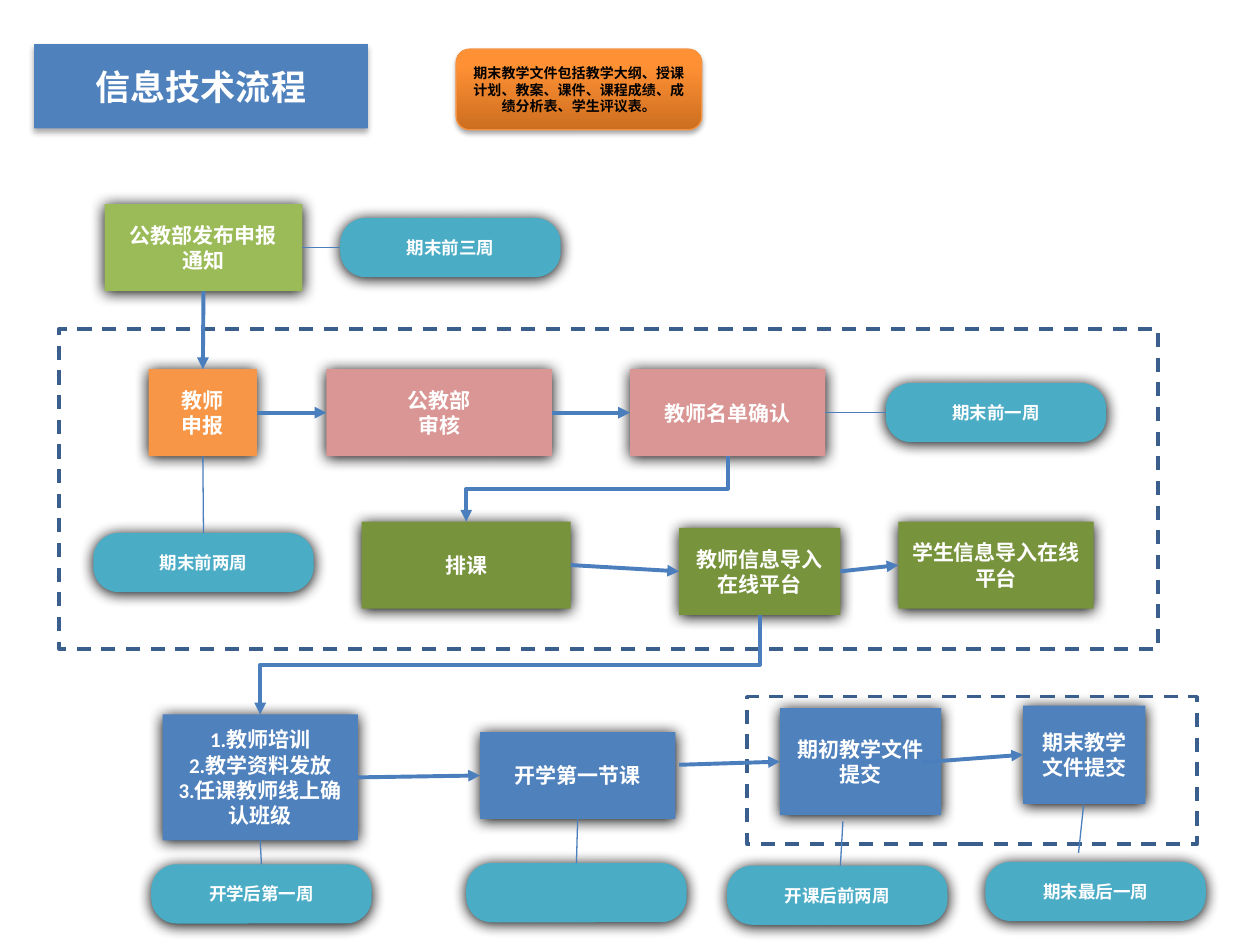
import copy
import dataclasses

import pptx
import pptx.dml.color
import pptx.enum.dml
import pptx.enum.shapes
import pptx.enum.text
import pptx.oxml.ns
import pptx.util

SHAPES = pptx.enum.shapes.MSO_SHAPE
CONNECTORS = pptx.enum.shapes.MSO_CONNECTOR
TOP, LEFT, BOTTOM, RIGHT = range(4)  # connection sites
COLUMNS, ROWS = 100, 75
SLIDE_WIDTH, SLIDE_HEIGHT = pptx.util.Inches(10), pptx.util.Inches(7.5)
BOX_HEIGHT = 6.9
PILL_SIZE = (17.5, 4.7)


@dataclasses.dataclass(frozen=True)
class Theme:
    font: str = "Calibri"
    title_size: float = 20
    step_size: float = 12
    time_size: float = 10
    note_size: float = 8
    white: str = "FFFFFF"
    black: str = "000000"
    blue: str = "4F81BD"
    lime: str = "9BBB59"
    orange: str = "F79646"
    pink: str = "D99694"
    green: str = "77933C"
    teal: str = "4BACC6"
    connector: str = "4B7EBC"
    frame: str = "3A5F8C"
    note_line: str = "F69240"
    note_stops: tuple = ((0, "CC6E20"), (0.8, "FF9034"), (1, "FF9136"))
    # blur, distance, opacity in percent
    step_shadow: tuple = (8.5, 1, 100)
    title_shadow: tuple = (3.5, 2.2, 32)
    note_shadow: tuple = (3.1, 1.8, 35)


THEME = Theme()


@dataclasses.dataclass(frozen=True)
class Box:
    """A region of the slide, measured in grid columns and rows."""
    left: float
    top: float
    width: float
    height: float

    def inner(self, left, top, width, height):
        return Box(self.left + left, self.top + top, width, height)

    def point(self, column, row):
        return across(self.left + column), down(self.top + row)


def across(columns):
    return round(SLIDE_WIDTH * columns / COLUMNS)


def down(rows):
    return round(SLIDE_HEIGHT * rows / ROWS)


def rgb(value):
    return pptx.dml.color.RGBColor.from_string(value)


def add_child(parent, tag, **attributes):
    child = parent.makeelement(pptx.oxml.ns.qn(tag), attributes)
    parent.append(child)
    return child


def add_panel(slide, box, kind=SHAPES.RECTANGLE):
    shape = slide.shapes.add_shape(
        kind, across(box.left), down(box.top), across(box.width), down(box.height))
    shape.shadow.inherit = False
    shape.line.fill.background()
    return shape


def set_fill(shape, color):
    shape.fill.solid()
    shape.fill.fore_color.rgb = rgb(color)


def set_shadow(shape, settings):
    blur, distance, opacity = settings
    effects = shape._element.spPr.find(pptx.oxml.ns.qn("a:effectLst"))
    shadow = add_child(effects, "a:outerShdw", blurRad=str(pptx.util.Pt(blur)),
                       dist=str(pptx.util.Pt(distance)), dir="5400000", rotWithShape="0")
    color = add_child(shadow, "a:srgbClr", val=THEME.black)
    add_child(color, "a:alpha", val=str(opacity * 1000))


def set_text(shape, text, size, color=THEME.white):
    frame = shape.text_frame
    frame.text = text
    frame.word_wrap = True
    frame.vertical_anchor = pptx.enum.text.MSO_ANCHOR.MIDDLE
    for paragraph in frame.paragraphs:
        paragraph.alignment = pptx.enum.text.PP_ALIGN.CENTER
        for run in paragraph.runs:
            run.font.name = THEME.font
            run.font.size = pptx.util.Pt(size)
            run.font.bold = True
            run.font.color.rgb = rgb(color)


def add_step(slide, box, text, color):
    shape = add_panel(slide, box)
    set_fill(shape, color)
    set_shadow(shape, THEME.step_shadow)
    set_text(shape, text, THEME.step_size)
    return shape


def add_time(slide, region, column, row, text=""):
    """Add a pill that tells when a step takes place."""
    shape = add_panel(slide, region.inner(column, row, *PILL_SIZE), SHAPES.ROUNDED_RECTANGLE)
    shape.adjustments[0] = 0.43
    set_fill(shape, THEME.teal)
    set_shadow(shape, THEME.step_shadow)
    if text:
        set_text(shape, text, THEME.time_size)
    return shape


def add_frame(slide, box):
    shape = add_panel(slide, box)
    shape.fill.background()
    shape.line.color.rgb = rgb(THEME.frame)
    shape.line.width = pptx.util.Pt(2)
    shape.line.dash_style = pptx.enum.dml.MSO_LINE.DASH


def style_connector(connector, arrow):
    connector.line.color.rgb = rgb(THEME.connector)
    connector.line.width = pptx.util.Pt(2.25 if arrow else 0.75)
    if arrow:
        add_child(connector.line._get_or_add_ln(), "a:tailEnd", type="triangle")
    add_child(connector._element.spPr, "a:effectLst")


def connect(slide, start, end, arrow=True):
    """Draw a straight line; each end is a point or a (shape, site) pair."""
    start_glued, end_glued = (hasattr(target[0], "shape_id") for target in (start, end))
    start_point = (0, 0) if start_glued else start
    end_point = (0, 0) if end_glued else end
    connector = slide.shapes.add_connector(CONNECTORS.STRAIGHT, *start_point, *end_point)
    if start_glued:
        connector.begin_connect(*start)
    if end_glued:
        connector.end_connect(*end)
    style_connector(connector, arrow)


def connect_down_left(slide, upper, lower):
    """Draw an elbow arrow from the bottom of upper to the top of lower."""
    start_x, start_y = upper.left + upper.width // 2, upper.top + upper.height
    end_x, end_y = lower.left + lower.width // 2, lower.top
    connector = slide.shapes.add_connector(CONNECTORS.ELBOW, 0, 0, 0, 0)
    # A quarter turn swaps the two extents around the same centre.
    connector.width, connector.height = end_y - start_y, start_x - end_x
    connector.left = (start_x + end_x - connector.width) // 2
    connector.top = (start_y + end_y - connector.height) // 2
    connector._element.spPr.find(pptx.oxml.ns.qn("a:xfrm")).set("rot", "5400000")
    style_connector(connector, arrow=True)


def add_header(slide, region):
    title = add_panel(slide, region.inner(0, 0, 26.5, 6.7))
    set_fill(title, THEME.blue)
    set_shadow(title, THEME.title_shadow)
    set_text(title, "信息技术流程", THEME.title_size)

    note = add_panel(slide, region.inner(33.5, 0.4, 19.5, 6.4), SHAPES.ROUNDED_RECTANGLE)
    note.fill.gradient()
    note.fill.gradient_angle = 90
    stops = next(note._element.spPr.iter(pptx.oxml.ns.qn("a:gsLst")))
    stops.append(copy.deepcopy(stops[-1]))
    for stop, (position, color) in zip(note.fill.gradient_stops, THEME.note_stops):
        stop.position = position
        stop.color.rgb = rgb(color)
    note.line.color.rgb = rgb(THEME.note_line)
    note.line.width = pptx.util.Pt(0.75)
    set_shadow(note, THEME.note_shadow)
    set_text(note, "期末教学文件包括教学大纲、授课计划、教案、课件、课程成绩、成绩分析表、学生评议表。",
             THEME.note_size, THEME.black)


def add_announcement(slide, region):
    notice = add_step(slide, region.inner(0, 0, 15.7, BOX_HEIGHT), "公教部发布申报\n通知", THEME.lime)
    time = add_time(slide, region, 18.7, 1.1, "期末前三周")
    connect(slide, (notice, RIGHT), (time, LEFT), arrow=False)
    return notice


def add_selection(slide, region):
    """Add the framed steps; return the first step and the one that leads on."""
    add_frame(slide, region)
    apply, review, confirm, schedule, teachers, students = [
        add_step(slide, region.inner(column, row, width, BOX_HEIGHT), text, color)
        for column, row, width, text, color in (
            (7.1, 3.2, 8.6, "教师\n申报", THEME.orange),
            (21.2, 3.2, 17.9, "公教部\n审核", THEME.pink),
            (45.3, 3.2, 15.5, "教师名单确认", THEME.pink),
            (24, 15.3, 16.6, "排课", THEME.green),
            (49.2, 15.8, 12.8, "教师信息导入在线平台", THEME.green),
            (66.6, 15.3, 15.5, "学生信息导入在线平台", THEME.green))]
    for start, end in ((apply, review), (review, confirm), (schedule, teachers), (teachers, students)):
        connect(slide, (start, RIGHT), (end, LEFT))
    connect_down_left(slide, confirm, schedule)
    apply_time = add_time(slide, region, 2.7, 16.2, "期末前两周")
    confirm_time = add_time(slide, region, 65.6, 4.3, "期末前一周")
    connect(slide, (apply, BOTTOM), (apply_time, TOP), arrow=False)
    connect(slide, (confirm, RIGHT), (confirm_time, LEFT), arrow=False)
    return apply, teachers


def add_teaching(slide, region):
    training, lesson, early_files, final_files = [
        add_step(slide, region.inner(*place), text, THEME.blue) for place, text in (
            ((0.9, 1.4, 15.5, 10), "1.教师培训\n2.教学资料发放\n3.任课教师线上确认班级"),
            ((26.1, 2.8, 15.5, BOX_HEIGHT), "开学第一节课"),
            ((49.9, 0.9, 12.8, 8.5), "期初教学文件提交"),
            ((69.2, 0.7, 9.7, 7.8), "期末教学文件提交"))]
    training_time, lesson_time, _, _ = [
        add_time(slide, region, *place) for place in (
            (0, 13.3, "开学后第一周"), (25, 13.2),
            (45.7, 13.4, "开课后前两周"), (66.2, 13.1, "期末最后一周"))]
    add_frame(slide, region.inner(47.3, 0, 35.7, 11.7))
    connect(slide, (training, RIGHT), (lesson, LEFT))
    connect(slide, region.point(41.9, 5.4), (early_files, LEFT))
    connect(slide, region.point(61.2, 5.2), (final_files, LEFT))
    for start, end in (((training, BOTTOM), (training_time, TOP)),
                       ((lesson, BOTTOM), (lesson_time, TOP)),
                       (region.point(54.9, 9.9), region.point(54.7, 13.4)),
                       (region.point(74, 8.6), region.point(73.6, 12.4))):
        connect(slide, start, end, arrow=False)
    return training


def main():
    presentation = pptx.Presentation()
    presentation.slide_width, presentation.slide_height = SLIDE_WIDTH, SLIDE_HEIGHT
    slide = presentation.slides.add_slide(presentation.slide_layouts[6])
    add_header(slide, Box(2.7, 3.5, 53, 6.8))
    notice = add_announcement(slide, Box(8.3, 16.2, 36.2, BOX_HEIGHT))
    apply, teachers = add_selection(slide, Box(4.7, 26.1, 87.2, 25.4))
    training = add_teaching(slide, Box(12, 55.3, 83.7, 18.1))
    connect(slide, (notice, BOTTOM), (apply, TOP))
    connect_down_left(slide, teachers, training)
    presentation.save("out.pptx")


if __name__ == "__main__":
    main()
